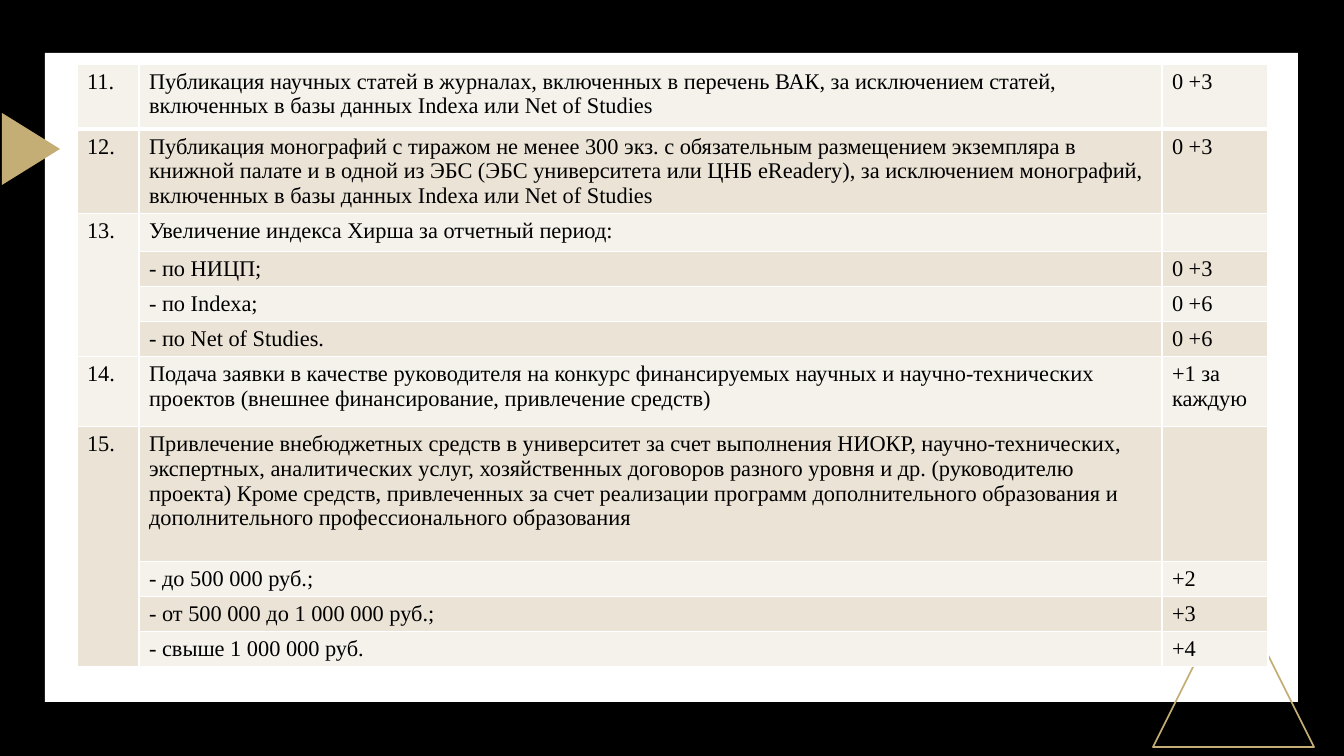
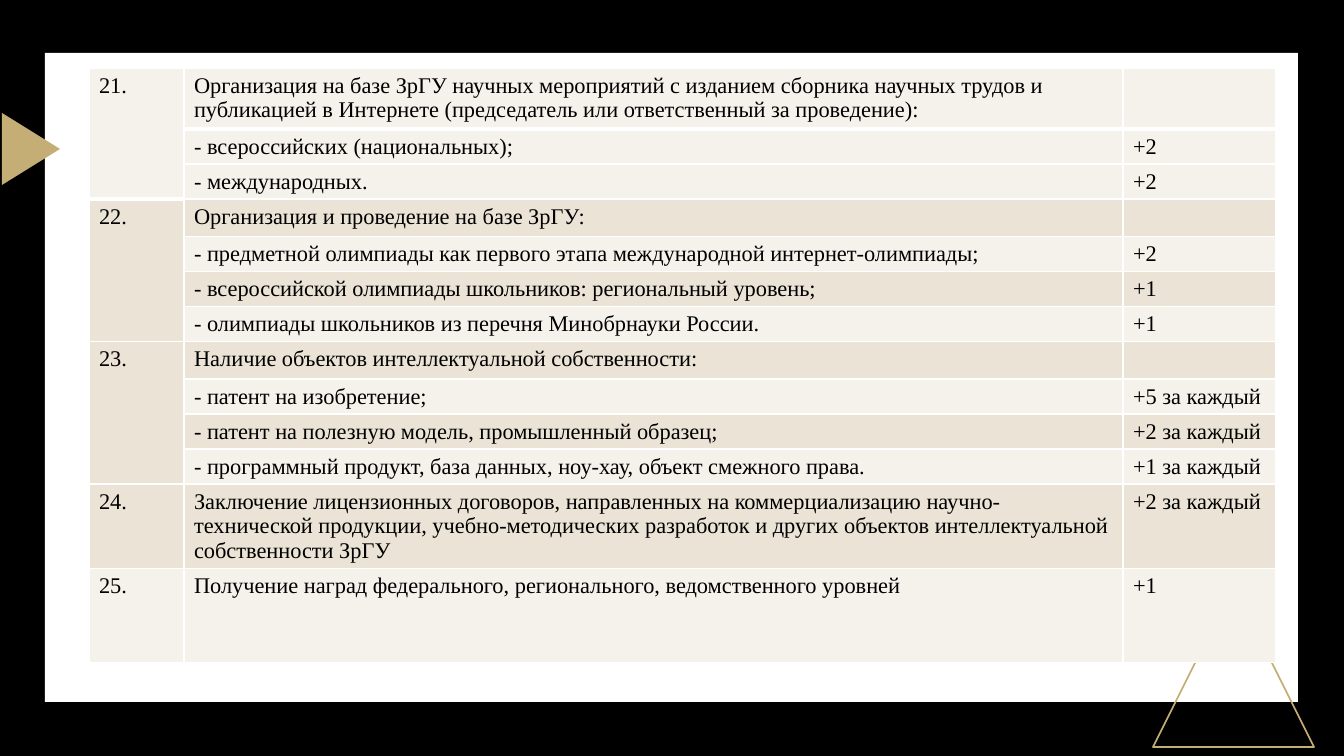
from dataclasses import dataclass

from lxml import etree
from pptx import Presentation
from pptx.dml.color import RGBColor
from pptx.enum.shapes import MSO_SHAPE
from pptx.oxml.ns import qn
from pptx.util import Emu, Pt

RECTANGLE = MSO_SHAPE.RECTANGLE
TRIANGLE = MSO_SHAPE.ISOSCELES_TRIANGLE
EMU_PER_PX = 12192000 / 1344


def px(length):
    return Emu(round(length * EMU_PER_PX))


@dataclass(frozen=True)
class Theme:
    background: str = "000000"
    panel: str = "FFFFFF"
    accent: str = "C4AE75"
    light_row: str = "F5F2EC"
    dark_row: str = "EAE3D6"
    text: str = "000000"
    border: str = "FFFFFF"
    font: str = "Times New Roman"
    text_size: int = 16
    outline: float = 1.25
    thin_border: int = 1
    thick_border: int = 3


class ScoreDeck:
    def __init__(self, theme):
        self.theme = theme
        self.deck = Presentation()
        self.deck.slide_width, self.deck.slide_height = px(1344), px(756)
        fill = self.deck.slide_master.background.fill
        fill.solid()
        fill.fore_color.rgb = RGBColor.from_string(theme.background)
        self.page = None

    def add_page(self):
        self.page = self.deck.slides.add_slide(self.deck.slide_layouts[6])
        self.add_shape(RECTANGLE, (45, 53, 1253, 649), fill=self.theme.panel)
        self.add_shape(TRIANGLE, (1153, 586, 161, 161), line=self.theme.accent)
        self.add_shape(TRIANGLE, (-5, 120, 72, 58), fill=self.theme.accent, rotation=90)

    def add_shape(self, kind, place, fill=None, line=None, rotation=0):
        shape = self.page.shapes.add_shape(kind, *map(px, place))
        shape.shadow.inherit = False
        shape.rotation = rotation
        if fill:
            shape.fill.solid()
            shape.fill.fore_color.rgb = RGBColor.from_string(fill)
        else:
            shape.fill.background()
        if line:
            shape.line.color.rgb = RGBColor.from_string(line)
            shape.line.width = Pt(self.theme.outline)
        else:
            shape.line.fill.background()

    def add_score_table(self, left, top, widths, rows):
        heights = [row[-1] for row in rows]
        place = map(px, (left, top, sum(widths), sum(heights)))
        table = self.page.shapes.add_table(len(rows), len(widths), *place).table
        table.first_row = table.horz_banding = False
        for column, width in zip(table.columns, widths):
            column.width = px(width)
        for line, height in zip(table.rows, heights):
            line.height = px(height)

        starts = [index for index, row in enumerate(rows) if row[0]] + [len(rows)]
        first_item_end = starts[1]
        for index, (*texts, _) in enumerate(rows):
            is_dark = index % 2 and index >= first_item_end
            fill = self.theme.dark_row if is_dark else self.theme.light_row
            for column, text in enumerate(texts):
                edge = first_item_end if column == 0 else 1
                cell = table.cell(index, column)
                self.set_borders(cell, index == edge, index in (0, edge - 1))
                self.fill_cell(cell, text, fill)
        for start, end in zip(starts, starts[1:]):
            if end - start > 1:
                table.cell(start, 0).merge(table.cell(end - 1, 0))

    def set_borders(self, cell, thick_top, thick_bottom):
        properties = cell._tc.get_or_add_tcPr()
        sides = {"lnL": False, "lnR": False, "lnT": thick_top, "lnB": thick_bottom}
        for side, thick in sides.items():
            width = self.theme.thick_border if thick else self.theme.thin_border
            line = etree.SubElement(properties, qn(f"a:{side}"), w=str(Pt(width)))
            solid = etree.SubElement(line, qn("a:solidFill"))
            etree.SubElement(solid, qn("a:srgbClr"), val=self.theme.border)

    def fill_cell(self, cell, text, fill):
        cell.fill.solid()
        cell.fill.fore_color.rgb = RGBColor.from_string(fill)
        cell.text_frame.text = text
        for para in cell.text_frame.paragraphs:
            for span in para.runs:
                span.font.name = self.theme.font
                span.font.size = Pt(self.theme.text_size)
                span.font.color.rgb = RGBColor.from_string(self.theme.text)
            if not para.runs:
                size = str(self.theme.text_size * 100)
                etree.SubElement(para._p, qn("a:endParaRPr"), sz=size)


PUBLICATION_ROWS = [
    ("11.", "Публикация научных статей в журналах, включенных в перечень ВАК, за исключением статей, "
     "включенных в базы данных Indexa или Net of Studies", "0 +3", 65),
    ("12.", "Публикация монографий с тиражом не менее 300 экз. с обязательным размещением экземпляра в "
     "книжной палате и в одной из ЭБС (ЭБС университета или ЦНБ eReadery), за исключением монографий, "
     "включенных в базы данных Indexa или Net of Studies", "0 +3", 84),
    ("13.", "Увеличение индекса Хирша за отчетный период:", "", 35),
    ("", "- по НИЦП;", "0 +3", 35),
    ("", "- по Indexa;", "0 +6", 35),
    ("", "- по Net of Studies.", "0 +6", 35),
    ("14.", "Подача заявки в качестве руководителя на конкурс финансируемых научных и научно-технических "
     "проектов (внешнее финансирование, привлечение средств)", "+1 за каждую", 70),
    ("15.", "Привлечение внебюджетных средств в университет за счет выполнения НИОКР, научно-технических, "
     "экспертных, аналитических услуг, хозяйственных договоров разного уровня и др. (руководителю "
     "проекта) Кроме средств, привлеченных за счет реализации программ дополнительного образования и\n"
     "дополнительного профессионального образования", "", 135),
    ("", "- до 500 000 руб.;", "+2", 35),
    ("", "- от 500 000 до 1 000 000 руб.;", "+3", 35),
    ("", "- свыше 1 000 000 руб.", "+4", 35),
]

EVENT_ROWS = [
    ("21.", "Организация на базе ЗрГУ научных мероприятий с изданием сборника научных трудов и "
     "публикацией в Интернете (председатель или ответственный за проведение):", "", 61),
    ("", "- всероссийских (национальных);", "+2", 35),
    ("", "- международных.", "+2", 35),
    ("22.", "Организация и проведение на базе ЗрГУ:", "", 35),
    ("", "- предметной олимпиады как первого этапа международной интернет-олимпиады;", "+2", 35),
    ("", "- всероссийской олимпиады школьников: региональный уровень;", "+1", 35),
    ("", "- олимпиады школьников из перечня Минобрнауки России.", "+1", 35),
    ("23.", "Наличие объектов интеллектуальной собственности:", "", 35),
    ("", "- патент на изобретение;", "+5 за каждый", 35),
    ("", "- патент на полезную модель, промышленный образец;", "+2 за каждый", 35),
    ("", "- программный продукт, база данных, ноу-хау, объект смежного права.", "+1 за каждый", 35),
    ("24.", "Заключение лицензионных договоров, направленных на коммерциализацию научно-технической "
     "продукции, учебно-методических разработок и других объектов интеллектуальной "
     "собственности ЗрГУ", "+2 за каждый", 84),
    ("25.", "Получение наград федерального, регионального, ведомственного уровней", "+1", 94),
]


def main():
    scores = ScoreDeck(Theme())
    scores.add_page()
    scores.add_score_table(77, 64, (62, 1023, 106), PUBLICATION_ROWS)
    scores.add_page()
    scores.add_score_table(89, 68, (95, 939, 153), EVENT_ROWS)
    scores.deck.save("out.pptx")


if __name__ == "__main__":
    main()
